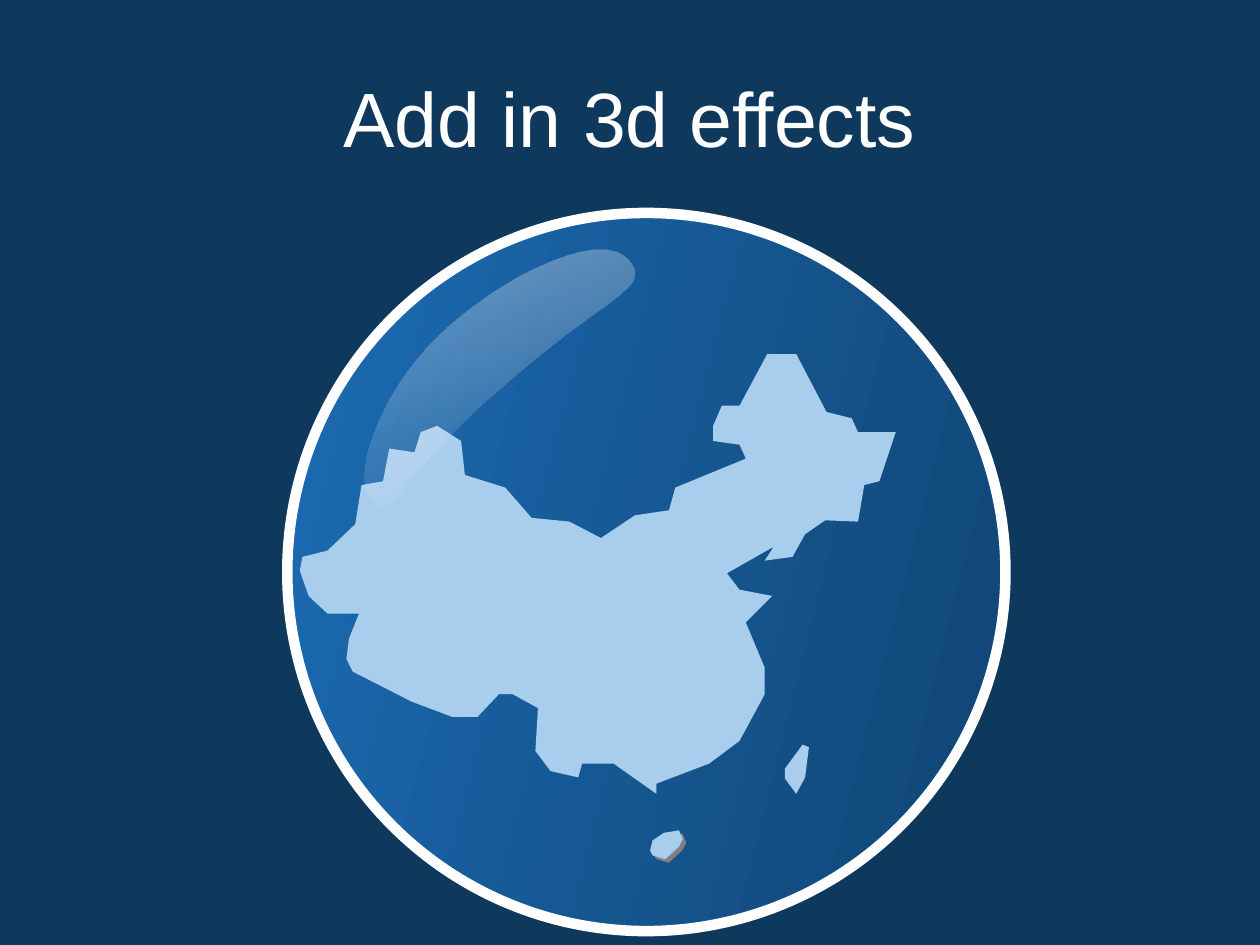
"""Builds a slide with a glossy globe and a map on it."""
from pptx import Presentation as Deck
from pptx.dml.color import RGBColor
from pptx.enum.shapes import MSO_SHAPE as Kind
from pptx.enum.text import MSO_ANCHOR as Anchor, PP_ALIGN as Align
from pptx.oxml.ns import qn
from pptx.oxml.xmlchemy import OxmlElement as Node
from pptx.util import Pt

UNIT = Pt(0.72)
HOME = (228, 169)
PALE = "A9CDED"

MAIN = [
    (711, 343), (681, 343), (676, 332), (656, 327), (632, 281), (609, 281),
    (587, 322), (573, 322), (566, 338), (566, 350), (587, 353), (592, 364),
    (536, 387), (531, 405), (504, 409), (477, 427), (452, 414), (422, 411),
    (401, 387), (369, 377), (366, 350), (347, 338), (334, 343), (329, 359),
    (309, 356), (304, 382), (287, 385), (282, 416), (260, 437), (240, 442),
    (238, 453), (245, 473), (260, 487), (285, 487), (277, 507), (275, 523),
    (280, 533), (327, 557), (359, 569), (379, 569), (396, 551), (407, 551),
    (427, 562), (425, 596), (437, 612), (459, 617), (462, 606), (487, 606),
    (521, 630), (521, 622), (563, 606), (587, 588), (607, 551), (607, 530),
    (592, 494), (613, 473), (587, 468), (577, 455), (614, 434), (607, 445),
    (629, 442), (639, 424), (655, 413), (681, 414), (686, 385), (698, 382),
]
SOUTH = [
    (516, 675), (518, 667), (527, 661), (539, 659), (542, 666), (539, 672),
    (528, 682), (518, 679),
]
EAST = [(632, 630), (623, 618), (623, 610), (637, 591), (642, 593), (639, 617)]
SHINE = [
    (394, 311), (307, 388), (313, 416), (295, 396), (277, 376), (306, 301),
    (358, 257), (409, 213), (478, 183), (498, 206), (518, 230), (481, 233),
    (394, 311),
]


def tint(code):
    """Return the colour for a hex string."""
    return RGBColor.from_string(code)


def write(frame, text, size=18, font="Arial", color="FFFFFF", align=Align.CENTER):
    """Put formatted text into a text frame."""
    para = frame.paragraphs[0]
    para.alignment = align
    run = para.add_run()
    run.text = text
    run.font.size, run.font.name = Pt(size), font
    run.font.color.rgb = tint(color)


def blend(shape, first, last, angle):
    """Fill a shape with two colours at a clockwise angle."""
    shape.fill.gradient()
    shape.fill.gradient_angle = 360 - angle
    for stop, code, place in zip(shape.fill.gradient_stops, (first, last), (0, 1)):
        stop.color.rgb, stop.position = tint(code), place


def trace(slide, box, marks):
    """Draw a closed outline, its marks laid out from the box corner."""
    left, top = box[:2]
    pen = slide.shapes.build_freeform(*marks[0], scale=UNIT)
    pen.add_line_segments(marks[1:], close=True)
    shape = pen.convert_to_shape(Pt(left) - HOME[0] * UNIT, Pt(top) - HOME[1] * UNIT)
    shape.shadow.inherit = False
    shape.line.fill.background()
    return shape


def curve(shape):
    """Turn each three line steps of an outline into one curve."""
    steps = shape._element.findall(".//" + qn("a:lnTo"))
    for i in range(0, len(steps), 3):
        bend = Node("a:cubicBezTo")
        steps[i].addprevious(bend)
        for step in steps[i:i + 3]:
            bend.append(step[0])
            step.getparent().remove(step)


def shade(shape, color, gap, angle):
    """Give a shape a hard shadow."""
    cast = Node("a:outerShdw")
    cast.set("dist", str(int(Pt(gap))))
    cast.set("dir", str(angle * 60000))
    cast.set("algn", "ctr")
    cast.set("rotWithShape", "0")
    hue = Node("a:srgbClr")
    hue.set("val", color)
    cast.append(hue)
    shape._element.spPr.find(qn("a:effectLst")).append(cast)


def title(slide, box, text):
    """Place the slide title in its box."""
    shape = slide.shapes.title
    shape.left, shape.top, shape.width, shape.height = map(Pt, box)
    shape.text_frame.vertical_anchor = Anchor.MIDDLE
    write(shape.text_frame, text, size=44)


def globe(slide, box):
    """Draw the ball with its white rim."""
    ball = slide.shapes.add_shape(Kind.OVAL, *map(Pt, box))
    ball.shadow.inherit = False
    blend(ball, "0E3D67", "1E73C0", 45)
    ball.line.color.rgb, ball.line.width = tint("FFFFFF"), Pt(6)
    ball.rotation = 329.2
    for side in ("flipH", "flipV"):
        ball._element.spPr.xfrm.set(side, "1")


def land(slide, box, marks):
    """Draw one piece of land on the globe."""
    shape = trace(slide, box, marks)
    shape.fill.solid()
    shape.fill.fore_color.rgb = tint(PALE)
    return shape


def gloss(slide, box):
    """Draw the fading highlight on the globe."""
    shape = trace(slide, box, SHINE)
    curve(shape)
    blend(shape, "FFFFFF", "FFFFFF", 74)
    hues = shape._element.spPr.findall(".//" + qn("a:srgbClr"))
    for hue, share in zip(hues, (37, 0)):
        alpha = Node("a:alpha")
        alpha.set("val", str(share * 1000))
        hue.append(alpha)


def main():
    """Build the slide and save it."""
    deck = Deck()
    deck.slide_width, deck.slide_height = Pt(720), Pt(540)
    slide = deck.slides.add_slide(deck.slide_layouts[5])
    slide.background.fill.solid()
    slide.background.fill.fore_color.rgb = tint("0F385D")
    box = (164.16, 121.68, 410.4, 410.4)
    globe(slide, box)
    title(slide, (36, 21.6, 648, 90), "Add in 3d effects")
    land(slide, box, MAIN)
    gloss(slide, box)
    shade(land(slide, box, SOUTH), "808080", 2.8, 45)
    land(slide, box, EAST)
    deck.save("out.pptx")


if __name__ == "__main__":
    main()
